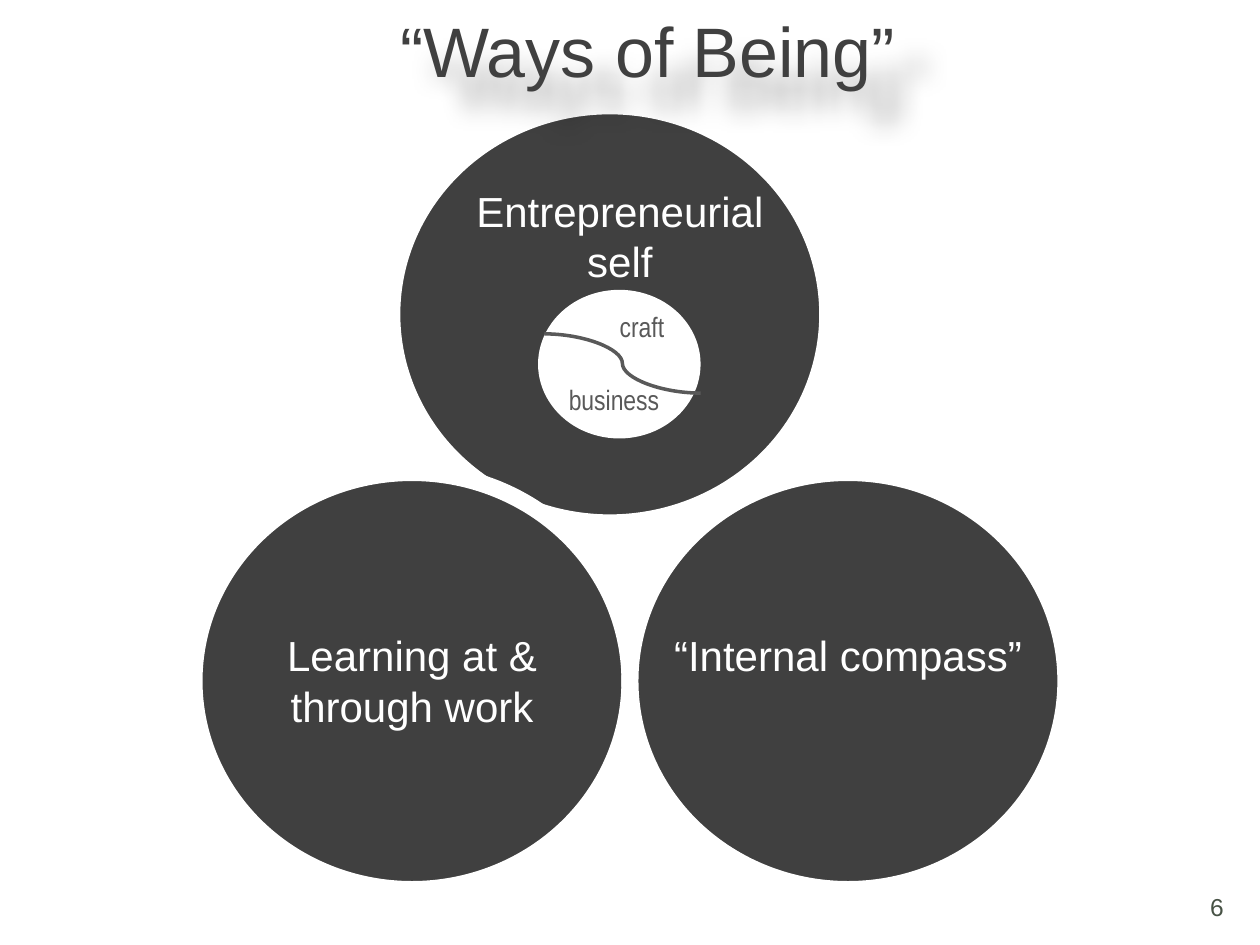
from dataclasses import dataclass

from lxml import etree
from pptx import Presentation
from pptx.dml.color import RGBColor
from pptx.enum import shapes, text
from pptx.oxml import ns
from pptx.util import Inches, Pt


@dataclass(frozen=True)
class Theme:
    dark: str = "404040"
    light: str = "FFFFFF"
    detail: str = "595959"
    footer: str = "475245"
    font: str = "Arial"
    narrow: str = "Arial Narrow"
    title_size: int = 40
    way_size: int = 24
    detail_size: int = 16
    footer_size: int = 14
    outline: float = 9.75
    divider: float = 2


THEME = Theme()
CENTER, RIGHT = text.PP_ALIGN.CENTER, text.PP_ALIGN.RIGHT

TITLE = "“Ways of Being”"
PAGE = "6"
WAY_SIZE = (3.46, 3.31)
LABEL_WIDTH = 2.98
WAYS = [
    {"label": "Entrepreneurial self", "at": (3.11, 0.84), "offset": (0.32, 0.58), "height": 0.91},
    {"label": "Learning at & through work", "at": (1.54, 3.75), "offset": (0.24, 1.2), "height": 0.91},
    {"label": "“Internal compass”", "at": (5, 3.75), "offset": (0.24, 1.2), "height": 0.5},
]
BALANCE = (4.27, 2.3, 1.29, 1.18)
DIVIDER = (4.32, 2.65, 5.56, 3.12)
HALVES = [("craft", (4.64, 2.41, 0.73, 0.37)), ("business", (4.16, 2.99, 1.17, 0.37))]


def color(value):
    return RGBColor.from_string(value)


def write(frame, words, size, ink, align, font=THEME.font):
    frame.word_wrap = True
    paragraph = frame.paragraphs[0]
    paragraph.alignment = align
    run = paragraph.add_run()
    run.text = words
    run.font.name, run.font.size = font, Pt(size)
    run.font.color.rgb = color(ink)


def add_label(slide, box, *style):
    label = slide.shapes.add_textbox(*map(Inches, box))
    write(label.text_frame, *style)


def add_circle(slide, box, fill, outline=None):
    circle = slide.shapes.add_shape(shapes.MSO_SHAPE.OVAL, *map(Inches, box))
    circle.shadow.inherit = False
    circle.fill.solid()
    circle.fill.fore_color.rgb = color(fill)
    if outline:
        circle.line.color.rgb = color(outline)
        circle.line.width = Pt(THEME.outline)
    else:
        circle.line.fill.background()


def add_way(slide, way):
    left, top = way["at"]
    dx, dy = way["offset"]
    add_circle(slide, (left, top, *WAY_SIZE), THEME.dark, THEME.light)
    add_label(slide, (left + dx, top + dy, LABEL_WIDTH, way["height"]),
              way["label"], THEME.way_size, THEME.light, CENTER)


def add_balance(slide):
    add_circle(slide, BALANCE, THEME.light)
    divider = slide.shapes.add_connector(shapes.MSO_CONNECTOR.CURVE, *map(Inches, DIVIDER))
    divider.line.color.rgb = color(THEME.detail)
    divider.line.width = Pt(THEME.divider)
    etree.SubElement(divider._element.spPr, ns.qn("a:effectLst"))
    for half, box in HALVES:
        add_label(slide, box, half, THEME.detail_size, THEME.detail, RIGHT, THEME.narrow)


def add_title(slide):
    title = slide.shapes.add_shape(shapes.MSO_SHAPE.ROUNDED_RECTANGLE,
                                   *map(Inches, (1.5, 0, 7.28, 0.79)))
    title.fill.background()
    title.line.fill.background()
    title.shadow.inherit = False
    effects = title._element.spPr.find(ns.qn("a:effectLst"))
    shadow = etree.SubElement(effects, ns.qn("a:outerShdw"), blurRad=str(Inches(0.2)),
                              dist=str(Inches(0.35)), dir="2700000", algn="tl", rotWithShape="0")
    tint = etree.SubElement(shadow, ns.qn("a:srgbClr"), val="000000")
    etree.SubElement(tint, ns.qn("a:alpha"), val="35000")
    title.text_frame.vertical_anchor = text.MSO_ANCHOR.MIDDLE
    write(title.text_frame, TITLE, THEME.title_size, THEME.dark, CENTER)


def main():
    deck = Presentation()
    deck.slide_width, deck.slide_height = Inches(10), Inches(7.5)
    slide = deck.slides.add_slide(deck.slide_layouts[6])
    add_label(slide, (7.73, 7.03, 2.08, 0.5), PAGE, THEME.footer_size, THEME.footer, RIGHT)
    top_way, *lower_ways = WAYS
    add_way(slide, top_way)
    add_balance(slide)
    for way in lower_ways:
        add_way(slide, way)
    add_title(slide)
    deck.save("out.pptx")


if __name__ == "__main__":
    main()
